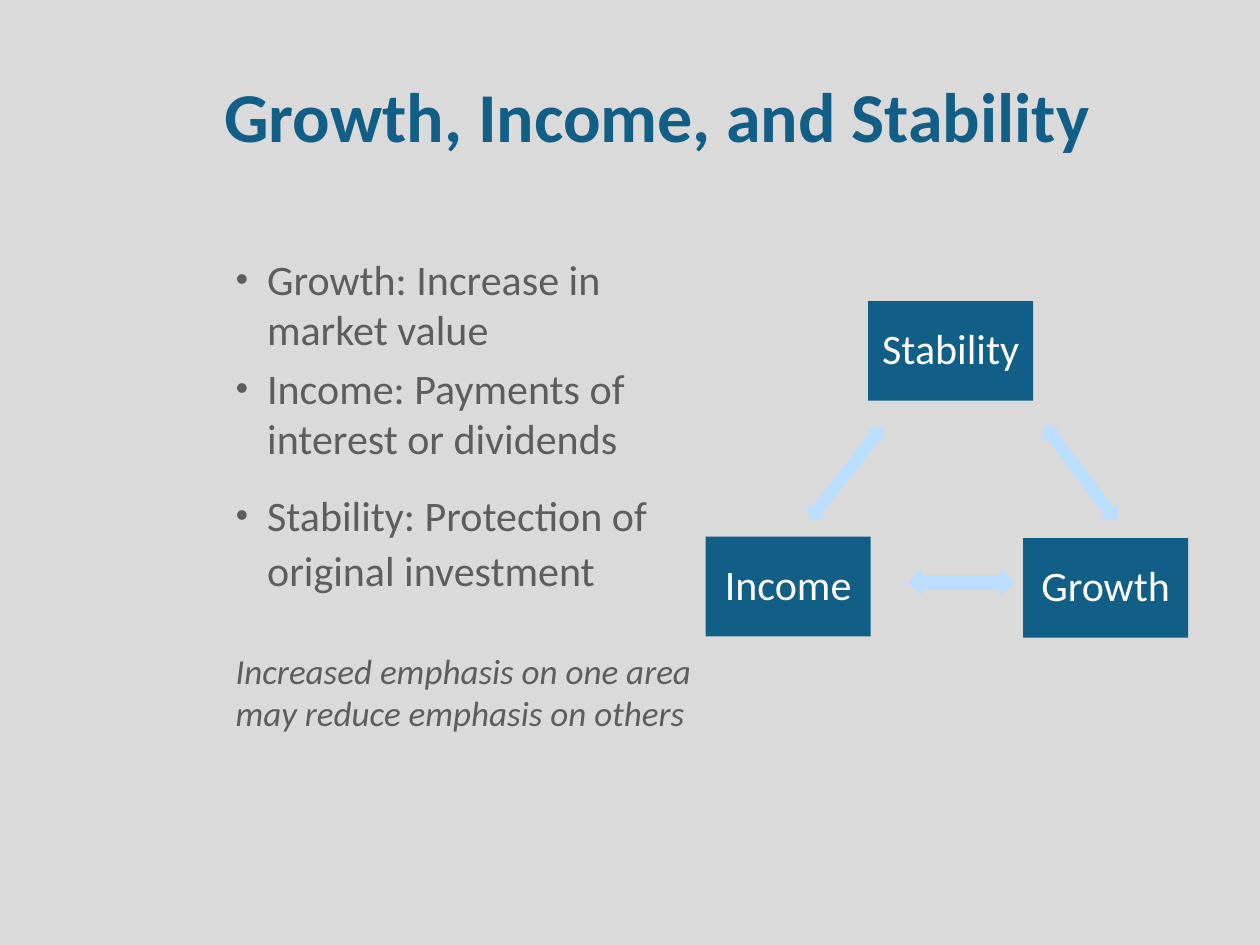
from lxml import etree
from pptx import Presentation, util as u
from pptx.dml.color import RGBColor
from pptx.enum import shapes, text
from pptx.oxml.ns import qn

COLORS = {"bg": "DADADA", "blue": "115E86", "gray": "5D5D5D",
          "arrow": "BADEFF", "white": "FFFFFF"}
TITLE = "Growth, Income, and Stability"
# text, has bullet, format
BODY = [
    ("Growth: Increase in market value", True, {}),
    ("Income: Payments of interest or dividends", True, {"before": 4.8}),
    ("Stability: Protection of original investment", True,
     {"before": 12, "spacing": 1.1}),
    ("Increased emphasis on one area may reduce emphasis on others", False,
     {"before": 31, "size": 20, "italic": True}),
]
BOX_SIZE = (1.31, 0.79)
BOXES = [("Stability", 6.89, 2.39), ("Income", 5.6, 4.26), ("Growth", 8.12, 4.27)]
# left, top, width, height, rotation
ARROWS = [(7.21, 4.51, 0.84, 0.22, 0),
          (6.24, 3.66, 0.95, 0.19, 308),
          (8.1, 3.66, 0.95, 0.19, 232.6)]


def color(name):
    return RGBColor.from_string(COLORS[name])


def place(s, left, top, width, height):
    s.left, s.top, s.width, s.height = map(u.Inches, (left, top, width, height))


def write(p, words, size=24, fill="gray", bold=False, italic=False,
          align=text.PP_ALIGN.LEFT, before=0, spacing=1.0):
    p.alignment, p.line_spacing = align, spacing
    p.space_before = u.Pt(before)
    r = p.add_run()
    r.text = words
    f = r.font
    f.name, f.size, f.bold, f.italic = "Calibri", u.Pt(size), bold, italic
    f.color.rgb = color(fill)


def set_bullet(p, shown):
    pPr = p._p.get_or_add_pPr()
    indent = u.Inches(0.25) if shown else 0
    pPr.set("marL", str(indent))
    pPr.set("indent", str(-indent))
    if not shown:
        etree.SubElement(pPr, qn("a:buNone"))
        return
    clr = etree.SubElement(pPr, qn("a:buClr"))
    etree.SubElement(clr, qn("a:srgbClr"), val=COLORS["gray"])
    etree.SubElement(pPr, qn("a:buSzPct"), val="50000")
    etree.SubElement(pPr, qn("a:buFont"), typeface="Calibri")
    etree.SubElement(pPr, qn("a:buChar"), char="●")


def add_solid(slide, kind, fill, *frame):
    s = slide.shapes.add_shape(kind, *map(u.Inches, frame))
    s.shadow.inherit = False
    s.fill.solid()
    s.fill.fore_color.rgb = color(fill)
    s.line.fill.background()
    return s


def main():
    prs = Presentation()
    prs.slide_width, prs.slide_height = u.Inches(10), u.Inches(7.5)
    slide = prs.slides.add_slide(prs.slide_layouts[1])
    slide.background.fill.solid()
    slide.background.fill.fore_color.rgb = color("bg")

    title, body = slide.shapes.title, slide.placeholders[1]
    place(title, 1.68, 0.58, 7.83, 0.65)
    place(body, 1.77, 1.96, 4.1, 4.5)
    for s in (title, body):
        s.text_frame.auto_size = text.MSO_AUTO_SIZE.NONE
    title.text_frame.vertical_anchor = text.MSO_ANCHOR.MIDDLE
    write(title.text_frame.paragraphs[0], TITLE, size=40, fill="blue", bold=True)

    tf = body.text_frame
    for i, (words, bullet, style) in enumerate(BODY):
        p = tf.add_paragraph() if i else tf.paragraphs[0]
        set_bullet(p, bullet)
        write(p, words, **style)

    for label, left, top in BOXES:
        s = add_solid(slide, shapes.MSO_SHAPE.RECTANGLE, "blue", left, top, *BOX_SIZE)
        s.text_frame.word_wrap = False
        s.text_frame.vertical_anchor = text.MSO_ANCHOR.MIDDLE
        write(s.text_frame.paragraphs[0], label, fill="white",
              align=text.PP_ALIGN.CENTER, spacing=0.9)

    for *frame, angle in ARROWS:
        s = add_solid(slide, shapes.MSO_SHAPE.LEFT_RIGHT_ARROW, "arrow", *frame)
        s.rotation = angle

    prs.save("out.pptx")


if __name__ == "__main__":
    main()
